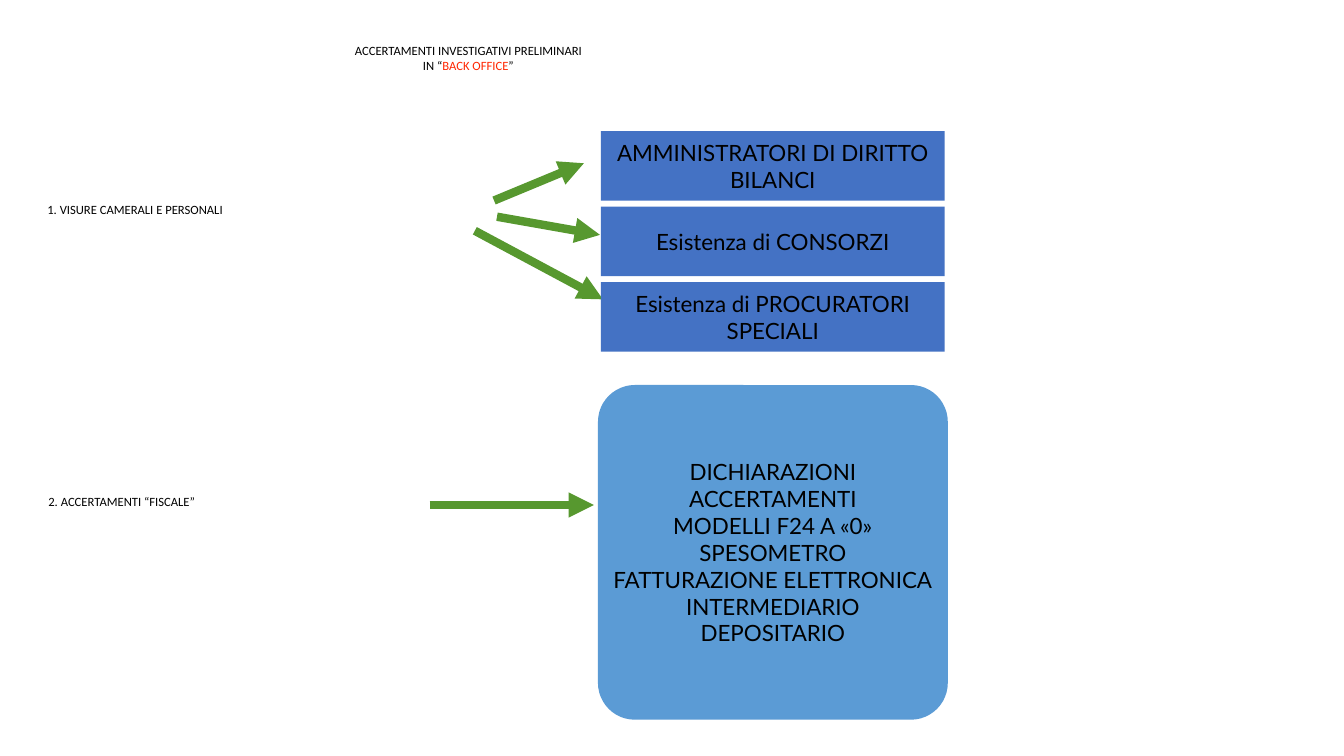
"""Build the slide on preliminary back-office investigations."""
from dataclasses import dataclass

import pptx
import pptx.dml.color
import pptx.enum.shapes
import pptx.enum.text
import pptx.oxml
import pptx.oxml.ns
import pptx.util

SHAPE = pptx.enum.shapes.MSO_SHAPE
ALIGN = pptx.enum.text.PP_ALIGN
WIDTH = pptx.util.Inches(13.33)
HEIGHT = pptx.util.Inches(7.5)


@dataclass(frozen=True)
class Theme:
    ink: str = "000000"
    accent: str = "FF2600"
    arrow: str = "57982F"
    finding: str = "4472C4"
    records: str = "5B9BD5"
    label_font: str = "Calibri"
    label_size: float = 9
    box_font: str = "Lato"
    box_size: float = 16
    arrow_width: float = 6
    inset: float = 0.03


@dataclass(frozen=True)
class Area:
    """Percentages of the slide's width and height."""
    left: float
    top: float
    width: float
    height: float


@dataclass(frozen=True)
class Span:
    text: str
    color: str


@dataclass(frozen=True)
class Label:
    area: Area
    lines: tuple[tuple[Span, ...], ...]
    align: ALIGN = ALIGN.LEFT
    wrap: bool = True


@dataclass(frozen=True)
class Box:
    area: Area
    lines: tuple[str, ...]
    fill: str
    kind: SHAPE = SHAPE.RECTANGLE
    corner: float | None = None


@dataclass(frozen=True)
class Arrow:
    start: tuple[float, float]
    end: tuple[float, float]


THEME = Theme()

LABELS = (
    Label(
        Area(26.03, 5.33, 17.63, 4.8),
        (
            (Span("ACCERTAMENTI INVESTIGATIVI PRELIMINARI", THEME.ink),),
            (Span("IN “", THEME.ink), Span("BACK OFFICE", THEME.accent), Span("”", THEME.ink)),
        ),
        ALIGN.CENTER,
        False,
    ),
    Label(Area(3.3, 26.27, 33.91, 2.8), ((Span("1. VISURE CAMERALI E PERSONALI", THEME.ink),),)),
    Label(Area(3.38, 64.93, 29.11, 2.8), ((Span("2. ACCERTAMENTI “FISCALE”", THEME.ink),),)),
)

FINDINGS = (
    ("AMMINISTRATORI DI DIRITTO", "BILANCI"),
    ("Esistenza di CONSORZI",),
    ("Esistenza di PROCURATORI SPECIALI",),
)
FINDING_TOP = 17.33
FINDING_PITCH = 10

RECORDS = Box(
    Area(44.49, 50.93, 26.03, 44.27),
    (
        "DICHIARAZIONI",
        "ACCERTAMENTI",
        "MODELLI F24 A «0»",
        "SPESOMETRO",
        "FATTURAZIONE ELETTRONICA",
        "INTERMEDIARIO",
        "DEPOSITARIO",
    ),
    THEME.records,
    SHAPE.ROUNDED_RECTANGLE,
    0.11,
)

BOXES = tuple(
    Box(Area(44.71, FINDING_TOP + row * FINDING_PITCH, 25.58, 9.2), lines, THEME.finding)
    for row, lines in enumerate(FINDINGS)
) + (RECORDS,)

ARROWS = (
    Arrow((36.76, 26.53), (43.44, 21.6)),
    Arrow((36.98, 28.67), (44.64, 31.07)),
    Arrow((35.33, 30.53), (44.86, 39.6)),
    Arrow((31.96, 66.8), (44.19, 66.8)),
)


def across(share: float) -> int:
    return round(WIDTH * share / 100)


def down(share: float) -> int:
    return round(HEIGHT * share / 100)


def place(area: Area) -> tuple[int, int, int, int]:
    return across(area.left), down(area.top), across(area.width), down(area.height)


def rgb(color: str) -> pptx.dml.color.RGBColor:
    return pptx.dml.color.RGBColor.from_string(color)


def set_frame(frame, wrap: bool) -> None:
    frame.word_wrap = wrap
    frame.vertical_anchor = pptx.enum.text.MSO_ANCHOR.MIDDLE
    inset = pptx.util.Inches(THEME.inset)
    frame.margin_left = frame.margin_right = inset
    frame.margin_top = frame.margin_bottom = inset


def add_para(frame, index: int, align: ALIGN, font: str, size: float):
    para = frame.add_paragraph() if index else frame.paragraphs[0]
    para.alignment = align
    para.font.name = font
    para.font.size = pptx.util.Pt(size)
    return para


def draw_label(page, label: Label) -> None:
    frame = page.shapes.add_textbox(*place(label.area)).text_frame
    set_frame(frame, label.wrap)
    frame.auto_size = pptx.enum.text.MSO_AUTO_SIZE.SHAPE_TO_FIT_TEXT
    for index, spans in enumerate(label.lines):
        para = add_para(frame, index, label.align, THEME.label_font, THEME.label_size)
        for span in spans:
            run = para.add_run()
            run.text = span.text
            run.font.color.rgb = rgb(span.color)


def draw_box(page, box: Box) -> None:
    shape = page.shapes.add_shape(box.kind, *place(box.area))
    shape.shadow.inherit = False
    shape.fill.solid()
    shape.fill.fore_color.rgb = rgb(box.fill)
    shape.line.fill.background()
    if box.corner is not None:
        shape.adjustments[0] = box.corner
    set_frame(shape.text_frame, True)
    for index, line in enumerate(box.lines):
        para = add_para(shape.text_frame, index, ALIGN.CENTER, THEME.box_font, THEME.box_size)
        para.text = line
        para.font.color.rgb = rgb(THEME.ink)


def draw_arrow(page, arrow: Arrow) -> None:
    connector = page.shapes.add_connector(
        pptx.enum.shapes.MSO_CONNECTOR.STRAIGHT,
        across(arrow.start[0]), down(arrow.start[1]),
        across(arrow.end[0]), down(arrow.end[1]),
    )
    connector.line.color.rgb = rgb(THEME.arrow)
    connector.line.width = pptx.util.Pt(THEME.arrow_width)
    properties = connector.element.spPr
    outline = properties.find(pptx.oxml.ns.qn("a:ln"))
    namespace = pptx.oxml.ns.nsdecls("a")
    outline.append(pptx.oxml.parse_xml(f'<a:tailEnd {namespace} type="triangle"/>'))
    properties.append(pptx.oxml.parse_xml(f"<a:effectLst {namespace}/>"))


def main() -> None:
    deck = pptx.Presentation()
    deck.slide_width, deck.slide_height = WIDTH, HEIGHT
    page = deck.slides.add_slide(deck.slide_layouts[6])
    for label in LABELS:
        draw_label(page, label)
    for arrow in ARROWS:
        draw_arrow(page, arrow)
    for box in BOXES:
        draw_box(page, box)
    deck.save("out.pptx")


if __name__ == "__main__":
    main()
